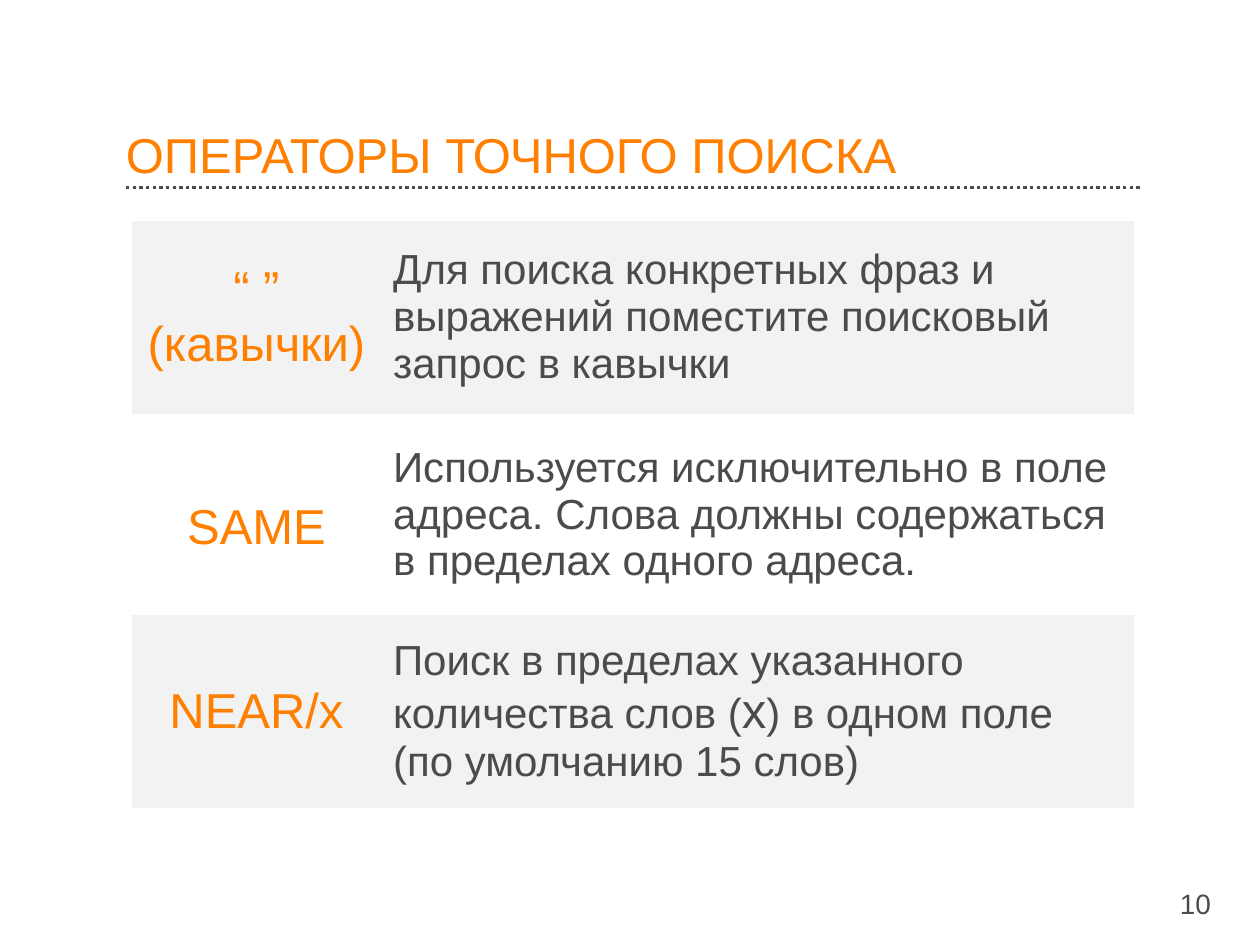
from pptx import Presentation
from pptx import util as u
from pptx.dml.color import RGBColor
from pptx.enum import dml, shapes, text
from pptx.oxml.ns import qn
from lxml import etree

ORANGE = RGBColor(0xFF, 0x80, 0x00)
GREY = RGBColor(0x4B, 0x4B, 0x4B)
BAND = RGBColor(0xF2, 0xF2, 0xF2)
PLAIN_STYLE = "{2D5ABB26-0587-4C30-8999-92F81FD0307C}"

ROWS = [
    ("“ ”\v(кавычки)",
     [("Для поиска конкретных фраз и выражений поместите поисковый "
       "запрос в кавычки", 24)]),
    ("SAME",
     [("Используется исключительно в поле адреса. Слова должны "
       "содержаться в пределах одного адреса.", 24)]),
    ("NEAR/x",
     [("Поиск в пределах указанного количества слов (", 24),
      ("х", 28),
      (") в одном поле (по умолчанию 15 слов)", 24)]),
]
COL_WIDTHS = (5, 15.19)
ROW_HEIGHTS = (3.89, 4.06, 3.89)


def set_font(font, size, color):
    font.name = "Arial"
    font.size = u.Pt(size)
    font.color.rgb = color


def add_text(s, box, content, size, color, align=text.PP_ALIGN.LEFT):
    tf = s.shapes.add_textbox(*map(u.Cm, box)).text_frame
    tf.word_wrap = True
    p = tf.paragraphs[0]
    p.text = content
    p.alignment = align
    set_font(p.font, size, color)
    return tf


def add_title(s, content):
    tf = add_text(s, (2.54, 1.4, 20.47, 2.31), content, 28, ORANGE)
    tf.margin_left = tf.margin_right = tf.margin_top = tf.margin_bottom = 0
    tf.vertical_anchor = text.MSO_ANCHOR.BOTTOM
    tf.paragraphs[0].line_spacing = 0.9


def add_rule(s):
    y = u.Cm(3.78)
    line = s.shapes.add_connector(
        shapes.MSO_CONNECTOR.STRAIGHT, u.Cm(2.54), y, u.Cm(23.01), y)
    line.line.color.rgb = GREY
    line.line.width = u.Pt(1.9)
    line.line.dash_style = dml.MSO_LINE.ROUND_DOT
    etree.SubElement(line._element.spPr, qn("a:effectLst"))


def style_cell(cell, banded):
    cell.vertical_anchor = text.MSO_ANCHOR.MIDDLE
    if banded:
        cell.fill.solid()
        cell.fill.fore_color.rgb = BAND
    else:
        cell.fill.background()


def add_operator_table(s):
    table = s.shapes.add_table(
        len(ROWS), len(COL_WIDTHS), u.Cm(2.67), u.Cm(4.45),
        u.Cm(sum(COL_WIDTHS)), u.Cm(sum(ROW_HEIGHTS))).table
    table.first_row = table.horz_banding = False
    table._tbl.tblPr.find(qn("a:tableStyleId")).text = PLAIN_STYLE
    for col, width in zip(table.columns, COL_WIDTHS):
        col.width = u.Cm(width)
    for i, (operator, description) in enumerate(ROWS):
        table.rows[i].height = u.Cm(ROW_HEIGHTS[i])
        name, about = table.cell(i, 0), table.cell(i, 1)
        for cell in (name, about):
            style_cell(cell, i % 2 == 0)
        p = name.text_frame.paragraphs[0]
        p.text = operator
        p.alignment = text.PP_ALIGN.CENTER
        set_font(p.font, 28, ORANGE)
        p = about.text_frame.paragraphs[0]
        for content, size in description:
            r = p.add_run()
            r.text = content
            set_font(r.font, size, GREY)
    table.cell(1, 0).margin_top = u.Cm(0.65)


def main():
    prs = Presentation()
    prs.slide_width, prs.slide_height = u.Cm(25.4), u.Cm(19.05)
    s = prs.slides.add_slide(prs.slide_layouts[6])
    add_rule(s)
    add_operator_table(s)
    add_title(s, "ОПЕРАТОРЫ ТОЧНОГО ПОИСКА")
    add_text(s, (23.39, 17.75, 1.27, 0.64), "10", 16, GREY,
             text.PP_ALIGN.RIGHT)
    prs.save("out.pptx")


if __name__ == "__main__":
    main()
